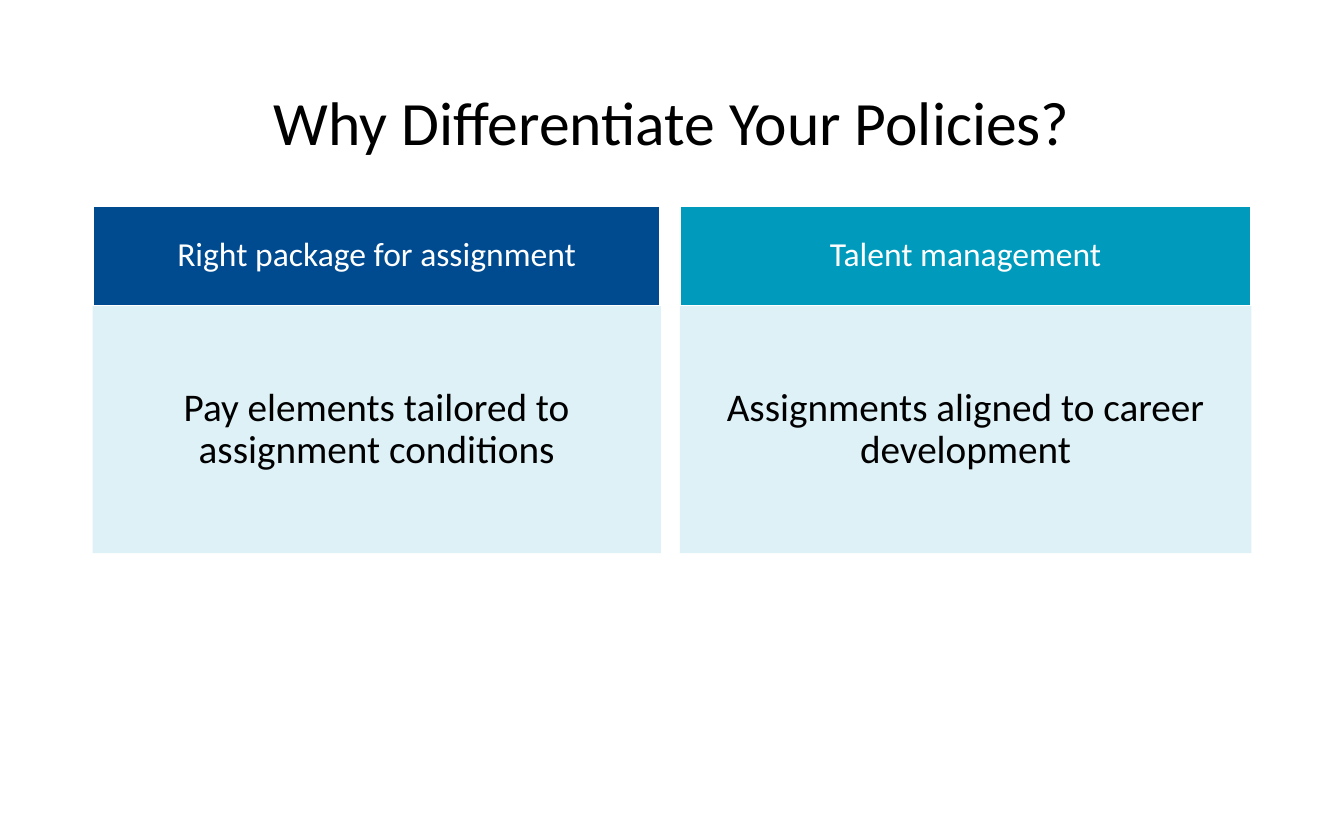
"""Build the slide on differentiating assignment policies."""
import dataclasses

import lxml.etree
import pptx
import pptx.dml.color
import pptx.enum.shapes
import pptx.enum.text
import pptx.oxml.ns
import pptx.util

Cm = pptx.util.Cm
Pt = pptx.util.Pt
Color = pptx.dml.color.RGBColor


@dataclasses.dataclass(frozen=True)
class Theme:
    font: str = "Calibri"
    navy: Color = Color(0x00, 0x4B, 0x90)
    teal: Color = Color(0x00, 0x9A, 0xBC)
    black: Color = Color(0x00, 0x00, 0x00)
    white: Color = Color(0xFF, 0xFF, 0xFF)
    panel_opacity: int = 13
    title_size: Pt = Pt(33)
    heading_size: Pt = Pt(18)
    body_size: Pt = Pt(21)


theme = Theme()


def write_text(shape, text, size, color):
    frame = shape.text_frame
    frame.word_wrap = True
    frame.auto_size = pptx.enum.text.MSO_AUTO_SIZE.NONE
    frame.vertical_anchor = pptx.enum.text.MSO_ANCHOR.MIDDLE
    paragraph = frame.paragraphs[0]
    paragraph.alignment = pptx.enum.text.PP_ALIGN.CENTER
    paragraph.line_spacing = 0.9
    run = paragraph.add_run()
    run.text = text
    run.font.name = theme.font
    run.font.size = size
    run.font.color.rgb = color


def add_box(left, top, width, height, fill):
    shape = slide.shapes.add_shape(
        pptx.enum.shapes.MSO_SHAPE.RECTANGLE, Cm(left), Cm(top), Cm(width), Cm(height)
    )
    shape.shadow.inherit = False
    shape.fill.solid()
    shape.fill.fore_color.rgb = fill
    return shape


presentation = pptx.Presentation()
presentation.slide_width = Cm(25.4)
presentation.slide_height = Cm(15.88)
slide = presentation.slides.add_slide(presentation.slide_layouts.get_by_name("Title Only"))
slide.background.fill.solid()
slide.background.fill.fore_color.rgb = theme.white

title = slide.shapes.title
title.left, title.top, title.width, title.height = Cm(1.75), Cm(0.84), Cm(21.9), Cm(3.07)
write_text(title, "Why Differentiate Your Policies?", theme.title_size, theme.black)

heading_top, heading_height, panel_height = 3.89, 1.9, 4.67
columns = [
    (1.75, 10.74, theme.navy, "Right package for assignment",
     "Pay elements tailored to assignment conditions"),
    (12.85, 10.8, theme.teal, "Talent management",
     "Assignments aligned to career development"),
]
for left, width, color, heading_text, panel_text in columns:
    heading = add_box(left, heading_top, width, heading_height, color)
    heading.line.color.rgb = theme.white
    heading.line.width = Pt(1.5)
    write_text(heading, heading_text, theme.heading_size, theme.white)

    panel = add_box(left, heading_top + heading_height, width, panel_height, theme.teal)
    panel.line.fill.background()
    panel_color = panel.fill._xPr.find(".//" + pptx.oxml.ns.qn("a:srgbClr"))
    lxml.etree.SubElement(
        panel_color, pptx.oxml.ns.qn("a:alpha"), val=str(theme.panel_opacity * 1000)
    )
    write_text(panel, panel_text, theme.body_size, theme.black)

presentation.save("out.pptx")
